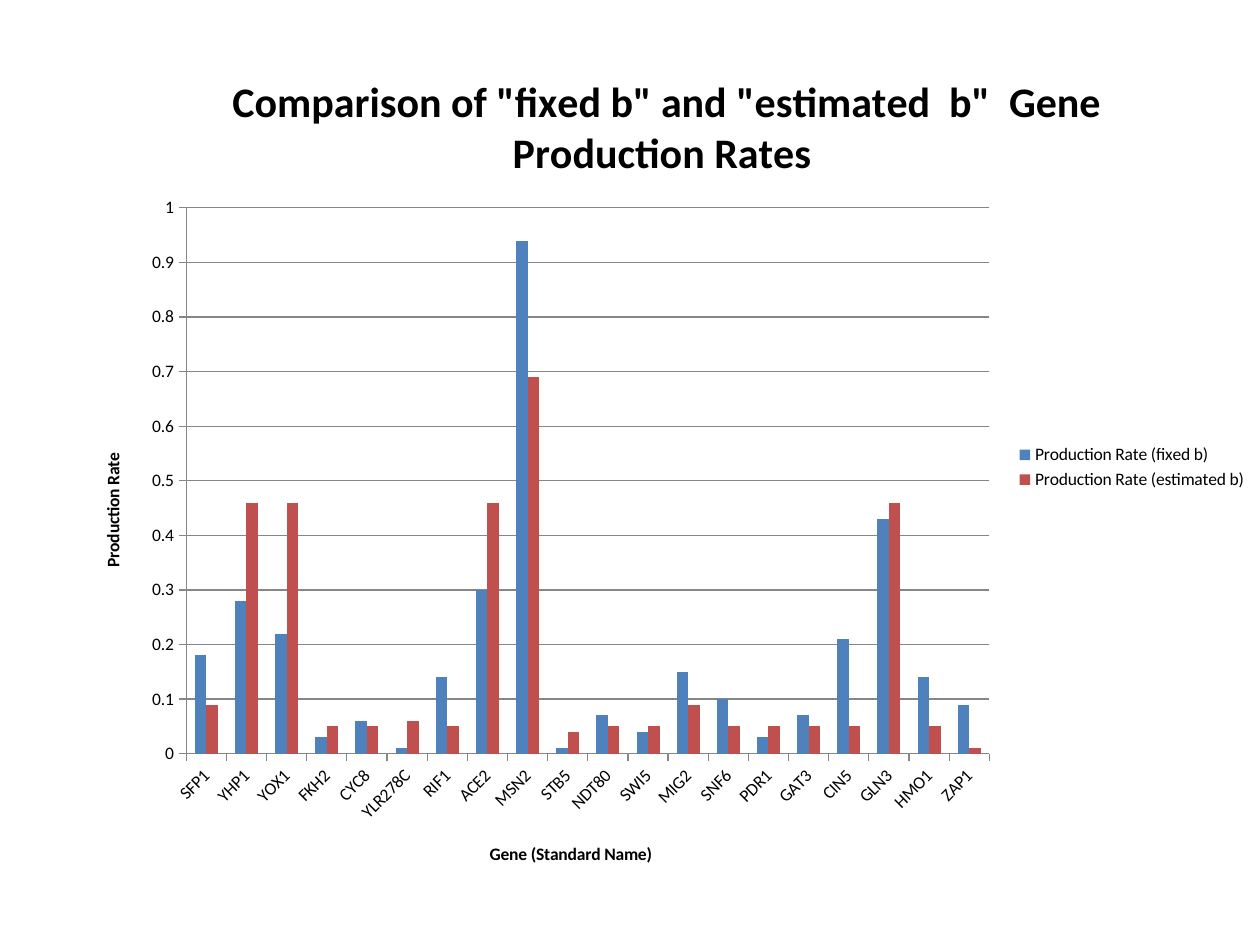
"""Build a slide with a clustered column chart of gene production rates."""
from dataclasses import dataclass

from pptx import Presentation
from pptx.chart.data import CategoryChartData
from pptx.dml.color import RGBColor
from pptx.enum.chart import XL_CHART_TYPE, XL_LEGEND_POSITION, XL_TICK_MARK
from pptx.oxml import parse_xml
from pptx.oxml.ns import nsdecls
from pptx.util import Pt


@dataclass(frozen=True)
class Theme:
    font: str = "Calibri"
    text: RGBColor = RGBColor(0, 0, 0)
    line: RGBColor = RGBColor(0x86, 0x86, 0x86)
    fixed: RGBColor = RGBColor(0x4F, 0x81, 0xBD)
    estimated: RGBColor = RGBColor(0xC0, 0x50, 0x4D)
    title_size: Pt = Pt(24)
    body_size: Pt = Pt(10)


theme = Theme()

rates = [
    ("SFP1", 0.18, 0.09), ("YHP1", 0.28, 0.46), ("YOX1", 0.22, 0.46),
    ("FKH2", 0.03, 0.05), ("CYC8", 0.06, 0.05), ("YLR278C", 0.01, 0.06),
    ("RIF1", 0.14, 0.05), ("ACE2", 0.3, 0.46), ("MSN2", 0.94, 0.69),
    ("STB5", 0.01, 0.04), ("NDT80", 0.07, 0.05), ("SWI5", 0.04, 0.05),
    ("MIG2", 0.15, 0.09), ("SNF6", 0.1, 0.05), ("PDR1", 0.03, 0.05),
    ("GAT3", 0.07, 0.05), ("CIN5", 0.21, 0.05), ("GLN3", 0.43, 0.46),
    ("HMO1", 0.14, 0.05), ("ZAP1", 0.09, 0.01),
]
genes, fixed, estimated = zip(*rates)

prs = Presentation()
prs.slide_width, prs.slide_height = Pt(720), Pt(540)
s = prs.slides.add_slide(prs.slide_layouts[6])

data = CategoryChartData()
data.categories = genes
data.add_series("Production Rate (fixed b)", fixed)
data.add_series("Production Rate (estimated b)", estimated)
chart = s.shapes.add_chart(
    XL_CHART_TYPE.COLUMN_CLUSTERED, Pt(42), Pt(24), Pt(678), Pt(486), data
).chart
chart.font.name = theme.font
chart.font.size = theme.body_size
chart.font.color.rgb = theme.text

chart.has_legend = True
chart.legend.position = XL_LEGEND_POSITION.RIGHT
chart.legend.include_in_layout = False

plot = chart.plots[0]
plot.gap_width = 150
plot.overlap = 0
plot.vary_by_categories = False
for series, color in zip(plot.series, (theme.fixed, theme.estimated)):
    series.format.fill.solid()
    series.format.fill.fore_color.rgb = color

cat_axis, val_axis = chart.category_axis, chart.value_axis
val_axis.minimum_scale, val_axis.maximum_scale = 0, 1
val_axis.major_unit = 0.1
val_axis.has_major_gridlines = True
val_axis.tick_labels.number_format = "General"
val_axis.tick_labels.number_format_is_linked = False
for axis in (cat_axis, val_axis):
    axis.major_tick_mark = XL_TICK_MARK.OUTSIDE
    axis.tick_labels.font.size = theme.body_size
for item in (cat_axis, val_axis, val_axis.major_gridlines):
    item.format.line.color.rgb = theme.line
    item.format.line.width = Pt(0.75)

titles = [
    (chart, 'Comparison of "fixed b" and "estimated  b"  Gene Production Rates ', theme.title_size),
    (cat_axis, "Gene (Standard Name)", theme.body_size),
    (val_axis, "Production Rate", theme.body_size),
]
for owner, text, size in titles:
    title = owner.chart_title if owner is chart else owner.axis_title
    p = title.text_frame.paragraphs[0]
    p.add_run().text = text
    p.font.name = theme.font
    p.font.size = size
    p.font.bold = True
    p.font.color.rgb = theme.text

chart.element.xpath(".//c:catAx/c:txPr/a:bodyPr")[0].set("rot", "-2700000")
chart.element.xpath(".//c:valAx/c:title//a:bodyPr")[0].set("rot", "-5400000")
plot_area = chart.element.xpath(".//c:plotArea")[0]
for layout in plot_area.xpath("./c:layout"):
    plot_area.remove(layout)
plot_area.insert(0, parse_xml(
    f'<c:layout {nsdecls("c")}><c:manualLayout><c:layoutTarget val="inner"/>'
    '<c:xMode val="edge"/><c:yMode val="edge"/><c:x val="0.095"/><c:y val="0.195"/>'
    '<c:w val="0.677"/><c:h val="0.642"/></c:manualLayout></c:layout>'
))

prs.save("out.pptx")
